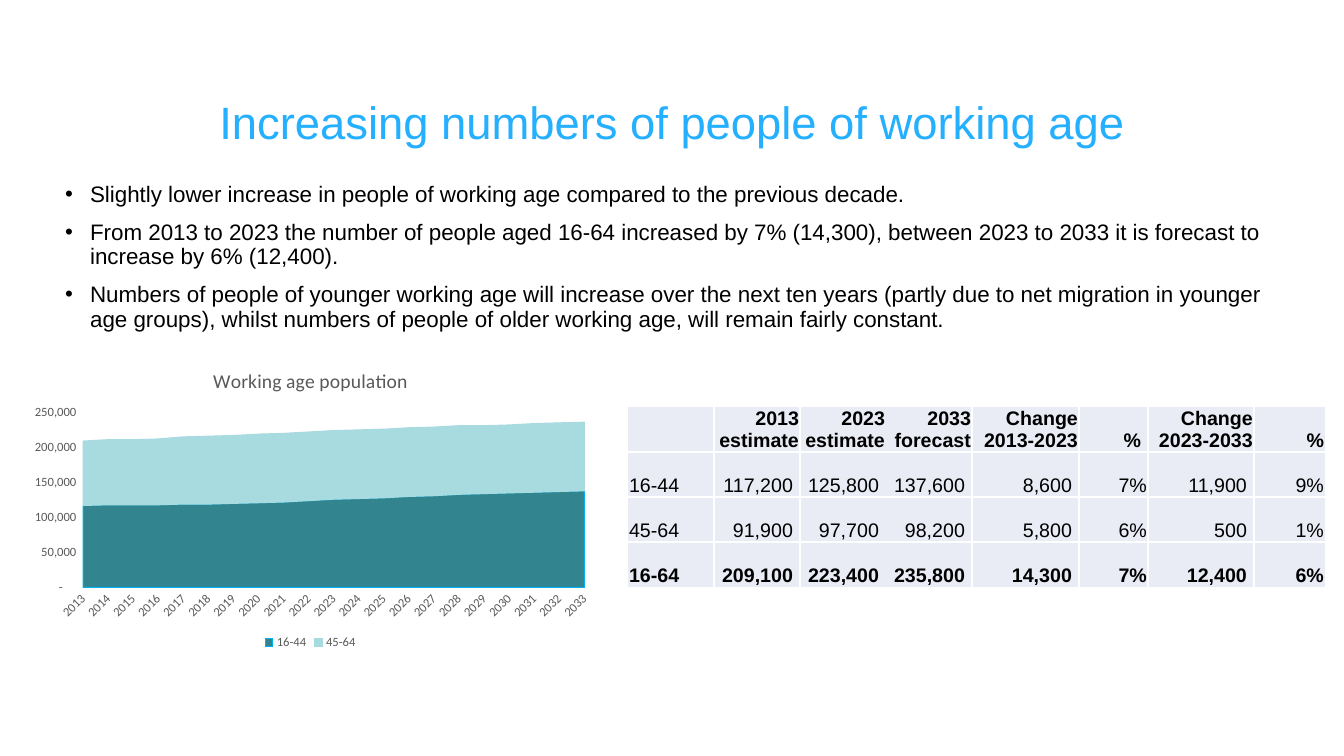
from lxml import etree
from pptx import Presentation
from pptx.chart.data import CategoryChartData
from pptx.dml.color import RGBColor
from pptx.enum.chart import XL_CHART_TYPE, XL_LEGEND_POSITION, XL_TICK_MARK
from pptx.enum.text import MSO_ANCHOR, MSO_AUTO_SIZE, PP_ALIGN
from pptx.oxml import parse_xml
from pptx.oxml.ns import nsdecls, qn
from pptx.util import Pt

PX = 914400 / 100.8
SLIDE_SIZE = (1344, 756)

SKY = RGBColor(0x24, 0xAF, 0xFF)
BLACK = RGBColor(0, 0, 0)
GREY = RGBColor(0x59, 0x59, 0x59)
AXIS_GREY = RGBColor(0xD9, 0xD9, 0xD9)
TEAL = RGBColor(0x32, 0x85, 0x8E)
BRIGHT_BLUE = RGBColor(0x00, 0xB0, 0xF0)
PALE_TEAL = RGBColor(0xA8, 0xDB, 0xE0)
LAVENDER = RGBColor(0xE9, 0xEB, 0xF5)
WHITE = RGBColor(0xFF, 0xFF, 0xFF)

TITLE = "Increasing numbers of people of working age"
FINDINGS = [
    "Slightly lower increase in people of working age compared to the previous decade.",
    "From 2013 to 2023 the number of people aged 16-64 increased by 7% (14,300), "
    "between 2023 to 2033 it is forecast to increase by 6% (12,400).",
    "Numbers of people of younger working age will increase over the next ten years "
    "(partly due to net migration in younger age groups), whilst numbers of people of "
    "older working age, will remain fairly constant.",
]

YEARS = range(2013, 2034)
AGE_GROUPS = [  # name, thousands of people, fill, outline
    ("16-44", [117, 118, 118, 118, 119, 119, 120, 121, 122, 124, 126, 127, 128, 130,
               131, 133, 134, 135, 136, 137, 138], TEAL, BRIGHT_BLUE),
    ("45-64", [92, 93, 93, 94, 96, 97, 97, 98, 98, 98, 98, 98, 98, 98,
               98, 98, 97, 97, 98, 98, 98], PALE_TEAL, PALE_TEAL),
]
COUNT_FORMAT = '_-* #,##0_-;\\-* #,##0_-;_-* "-"??_-;_-@_'

FORECAST = [
    ["", "2013 estimate", "2023 estimate", "2033 forecast",
     "Change 2013-2023", "%", "Change 2023-2033", "%"],
    ["16-44", "117,200", "125,800", "137,600", "8,600", "7%", "11,900", "9%"],
    ["45-64", "91,900", "97,700", "98,200", "5,800", "6%", "500", "1%"],
    ["16-64", "209,100", "223,400", "235,800", "14,300", "7%", "12,400", "6%"],
]
COLUMN_WIDTHS = [86, 86, 86, 86, 107, 69, 106, 71]
ROW_HEIGHT = 45
COUNT_COLUMNS = {1, 2, 3, 4, 6}
RULED_COLUMNS = {0, 3, 5}
RULED_ROWS = {0, 2}
PLAIN_TABLE_STYLE = "{2D5ABB26-0587-4C30-8999-92F81FD0307C}"


def px(length):
    return round(length * PX)


def style_font(font, size, color, name="Arial", bold=False):
    font.size, font.name, font.bold = Pt(size), name, bold
    font.color.rgb = color


def write(paragraph, text, size, color, align=PP_ALIGN.LEFT, bold=False,
          line_spacing=None, space_before=0):
    paragraph.text = text
    paragraph.alignment = align
    paragraph.line_spacing = line_spacing
    paragraph.space_before = Pt(space_before)
    style_font(paragraph.font, size, color, bold=bold)


def place(shape, box):
    shape.left, shape.top, shape.width, shape.height = map(px, box)


def fill_title(title, box):
    place(title, box)
    frame = title.text_frame
    frame.auto_size = MSO_AUTO_SIZE.NONE
    frame.vertical_anchor = MSO_ANCHOR.BOTTOM
    frame.margin_top, frame.margin_bottom = 0, px(29)
    write(frame.paragraphs[0], TITLE, 32.4, SKY, PP_ALIGN.CENTER, line_spacing=0.9)


def fill_findings(body, box):
    place(body, box)
    frame = body.text_frame
    frame.auto_size = MSO_AUTO_SIZE.NONE
    frame.vertical_anchor = MSO_ANCHOR.TOP
    for index, finding in enumerate(FINDINGS):
        paragraph = frame.add_paragraph() if index else frame.paragraphs[0]
        properties = paragraph._p.get_or_add_pPr()
        properties.set("marL", str(px(25)))
        properties.set("indent", str(-px(25)))
        etree.SubElement(properties, qn("a:buChar")).set("char", "•")
        write(paragraph, finding, 16, BLACK, line_spacing=0.9,
              space_before=10 if index else 0)


def fix_plot_area(chart, box, plot_box):
    """Pin the inner plot area to plot_box, given in px inside the chart box."""
    left, top, width, height = plot_box
    fractions = {"x": left / box[2], "y": top / box[3],
                 "w": width / box[2], "h": height / box[3]}
    values = "".join(f'<c:{key} val="{value:.2f}"/>' for key, value in fractions.items())
    layout = parse_xml(
        f'<c:layout {nsdecls("c")}><c:manualLayout><c:layoutTarget val="inner"/>'
        f'<c:xMode val="edge"/><c:yMode val="edge"/>{values}</c:manualLayout></c:layout>')
    plot_area = chart._chartSpace.chart.plotArea
    for automatic in plot_area.findall(qn("c:layout")):
        plot_area.remove(automatic)
    plot_area.insert(0, layout)


def add_population_chart(slide, box):
    data = CategoryChartData(number_format=COUNT_FORMAT)
    data.categories = [str(year) for year in YEARS]
    for name, thousands, _, _ in AGE_GROUPS:
        data.add_series(name, [count * 1000 for count in thousands])
    chart = slide.shapes.add_chart(
        XL_CHART_TYPE.AREA_STACKED, *map(px, box), data).chart
    style_font(chart.font, 10, BLACK, "Calibri")

    heading = chart.chart_title.text_frame.paragraphs[0]
    heading.text = "Working age population"
    style_font(heading.runs[0].font, 14, GREY, "Calibri")
    chart.chart_title.include_in_layout = False

    chart.has_legend = True
    chart.legend.position = XL_LEGEND_POSITION.BOTTOM
    chart.legend.include_in_layout = False
    style_font(chart.legend.font, 9, GREY, "Calibri")

    for series, (_, _, fill, outline) in zip(chart.plots[0].series, AGE_GROUPS):
        series.format.fill.solid()
        series.format.fill.fore_color.rgb = fill
        series.format.line.color.rgb = outline
        series.format.line.width = Pt(0.75)

    years, counts = chart.category_axis, chart.value_axis
    for axis in (years, counts):
        axis.has_major_gridlines = False
        axis.major_tick_mark = axis.minor_tick_mark = XL_TICK_MARK.NONE
        style_font(axis.tick_labels.font, 9, GREY, "Calibri")
    years.format.line.color.rgb = AXIS_GREY
    years.format.line.width = Pt(0.75)
    years._element.find(qn("c:txPr")).find(qn("a:bodyPr")).set("rot", "-2700000")
    counts.format.line.fill.background()
    counts.minimum_scale, counts.maximum_scale, counts.major_unit = 0, 250000, 50000
    counts.tick_labels.number_format = COUNT_FORMAT
    counts.tick_labels.number_format_is_linked = False
    counts._element.find(qn("c:crossBetween")).set("val", "midCat")
    fix_plot_area(chart, box, (62, 60, 504, 174))


def rule_cell(cell, sides):
    """Draw white rules on the given sides (L, R, T, B) of a filled cell."""
    properties = cell._tc.get_or_add_tcPr()
    rules = [side for side in "LRTB" if side in sides]
    for position, side in enumerate(rules):
        properties.insert(position, parse_xml(
            f'<a:ln{side} {nsdecls("a")} w="{Pt(2.25)}"><a:solidFill>'
            f'<a:srgbClr val="{WHITE}"/></a:solidFill></a:ln{side}>'))


def add_forecast_table(slide, left, top):
    table = slide.shapes.add_table(
        len(FORECAST), len(COLUMN_WIDTHS), px(left), px(top),
        px(sum(COLUMN_WIDTHS)), px(ROW_HEIGHT * len(FORECAST))).table
    table.first_row = table.horz_banding = False
    table._tbl.tblPr.find(qn("a:tableStyleId")).text = PLAIN_TABLE_STYLE
    for column, width in zip(table.columns, COLUMN_WIDTHS):
        column.width = px(width)
    for r, record in enumerate(FORECAST):
        table.rows[r].height = px(ROW_HEIGHT)
        for c, text in enumerate(record):
            cell = table.cell(r, c)
            spaced = (r > 0 and c in COUNT_COLUMNS) or (r, c) == (0, 5)
            cell.margin_left = cell.margin_top = px(1)
            cell.margin_right = px(7 if spaced else 1)
            cell.margin_bottom = 0
            cell.vertical_anchor = MSO_ANCHOR.BOTTOM
            cell.fill.solid()
            cell.fill.fore_color.rgb = LAVENDER
            write(cell.text_frame.paragraphs[0], text, 14, BLACK,
                  PP_ALIGN.RIGHT if c else PP_ALIGN.LEFT, bold=r in (0, 3))
            rule_cell(cell, "R" * (c in RULED_COLUMNS) + "L" * (c - 1 in RULED_COLUMNS)
                      + "B" * (r in RULED_ROWS) + "T" * (r - 1 in RULED_ROWS))


def main():
    deck = Presentation()
    deck.slide_width, deck.slide_height = map(px, SLIDE_SIZE)
    slide = deck.slides.add_slide(deck.slide_layouts[1])
    fill_title(slide.shapes.title, (92, 134, 1160, 44))
    fill_findings(slide.placeholders[1], (55, 178, 1233, 183))
    add_population_chart(slide, (19, 352, 583, 302))
    add_forecast_table(slide, 628, 407)
    deck.save("out.pptx")


if __name__ == "__main__":
    main()
